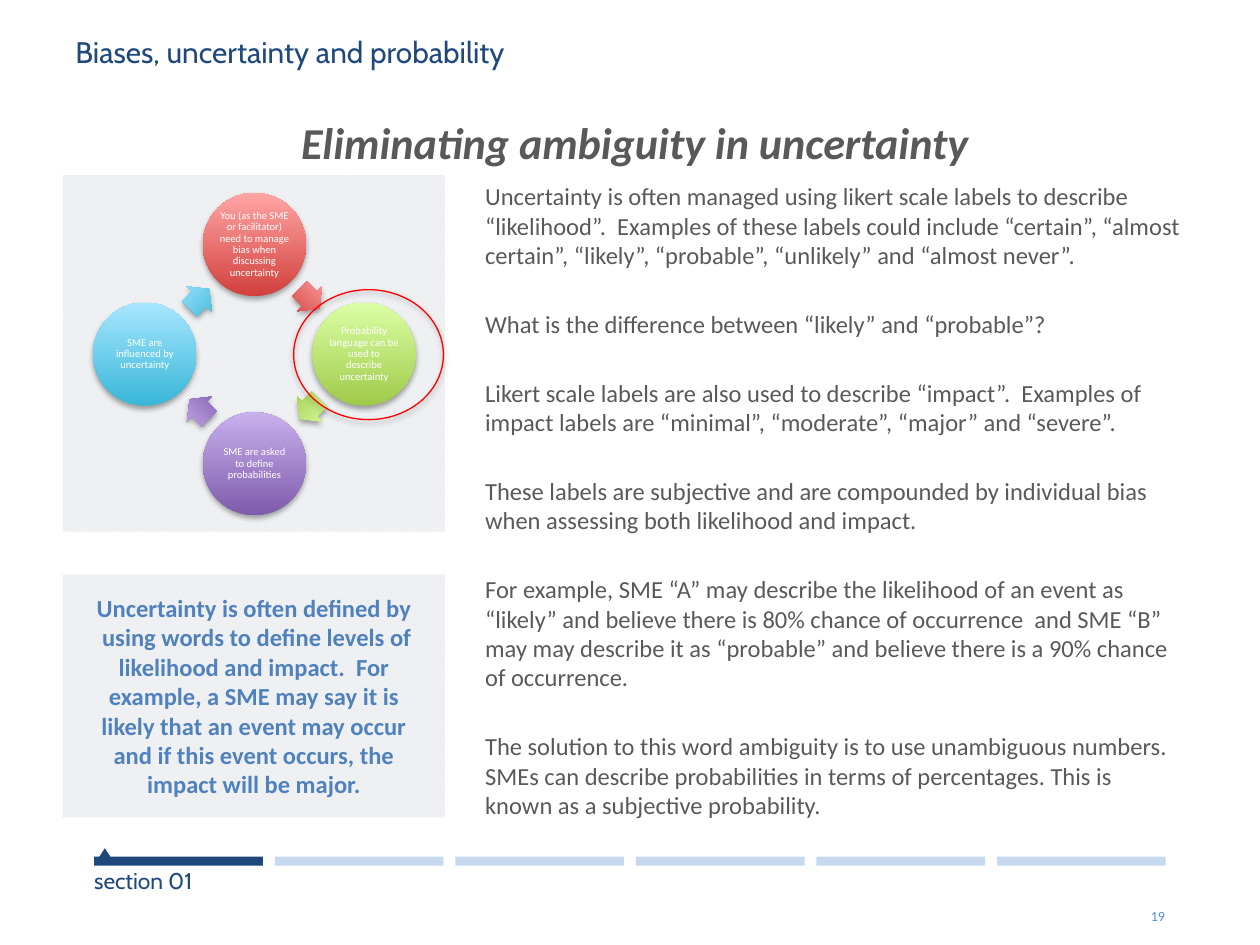
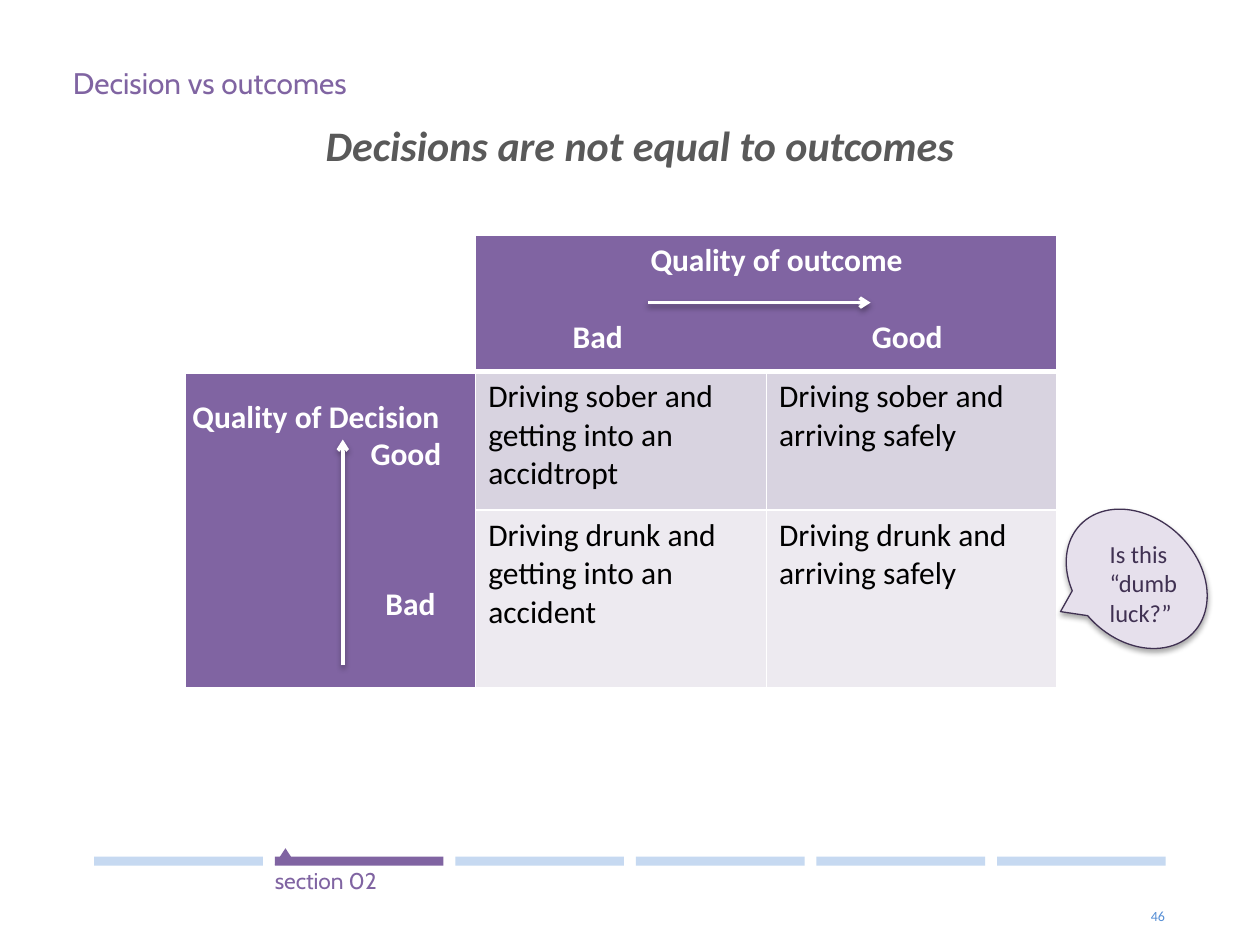
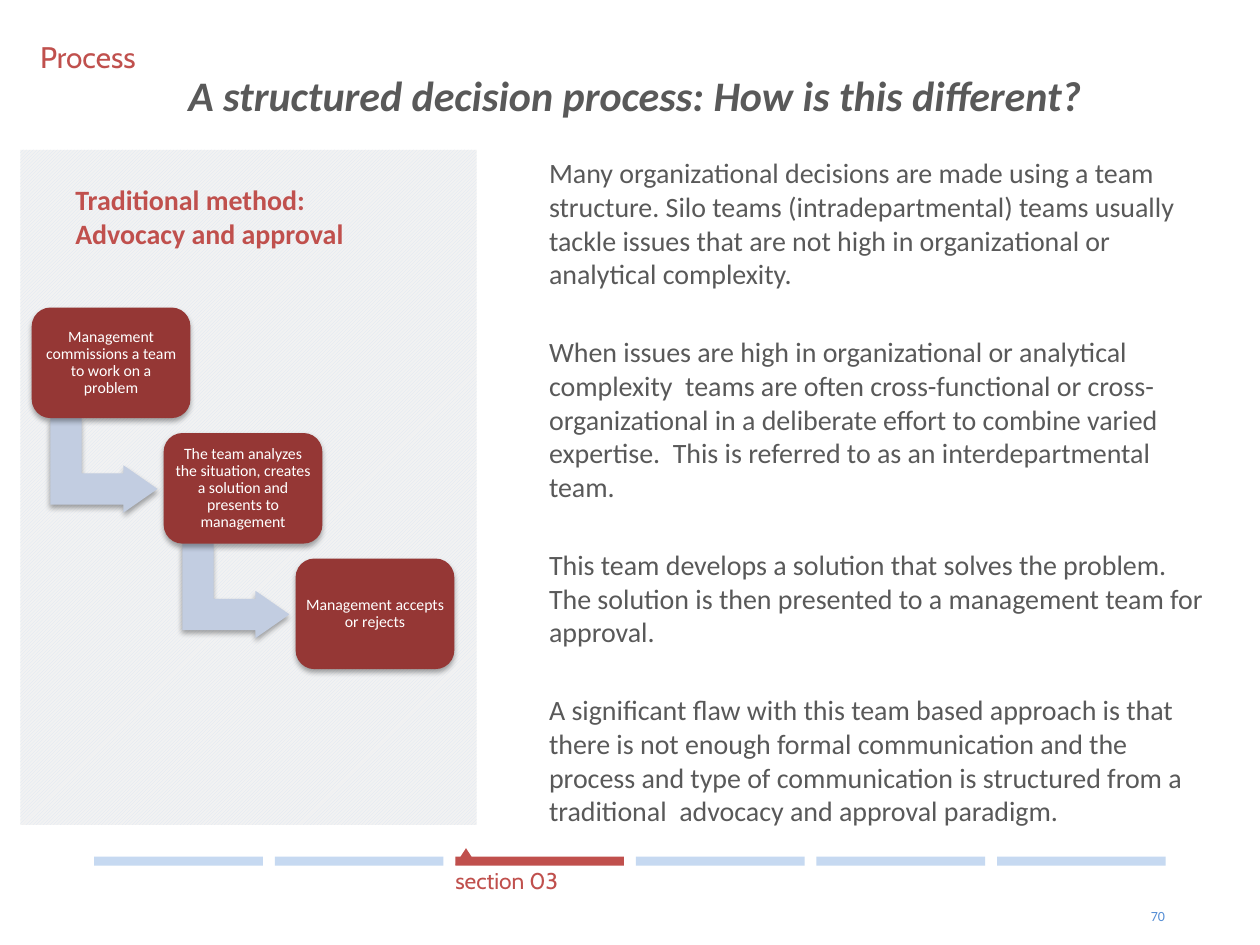
from lxml import etree
from pptx import Presentation
from pptx import util as u
from pptx.dml.color import RGBColor
from pptx.enum import dml, shapes, text
from pptx.oxml import parse_xml
from pptx.oxml.ns import nsdecls, qn

COLORS = {
    "navy": "1F497D", "purple": "8064A2", "red": "C0504D", "bar": "C6D9F1",
    "number": "558ED5", "gray": "595959", "blue": "4F81BD", "white": "FFFFFF",
    "black": "000000", "stripe": "DCE6F2", "panel": "F2F2F2", "ring": "FF0000",
    "brick": "953735", "bend": "C2CDE1", "bubble": "E6E0EC", "plum": "403152",
    "lilac": "D8D3E0", "mist": "EDEAF0",
}
RGB = {name: RGBColor.from_string(value) for name, value in COLORS.items()}
KIND = shapes.MSO_SHAPE
LEFT, CENTER, RIGHT = text.PP_ALIGN.LEFT, text.PP_ALIGN.CENTER, text.PP_ALIGN.RIGHT
TOP, MIDDLE, BOTTOM = text.MSO_ANCHOR.TOP, text.MSO_ANCHOR.MIDDLE, text.MSO_ANCHOR.BOTTOM
SHADOW = (
    f'<a:effectLst {nsdecls("a")}><a:outerShdw blurRad="40000" dist="23000" dir="5400000" '
    'rotWithShape="0"><a:srgbClr val="000000"><a:alpha val="35000"/></a:srgbClr>'
    "</a:outerShdw></a:effectLst>"
)


def write(frame, lines, size, color, font="Calibri", bold=False, italic=False, align=LEFT,
          anchor=TOP, inset=None, gap=0, spacing=None):
    frame.word_wrap = True
    frame.auto_size = text.MSO_AUTO_SIZE.NONE
    frame.vertical_anchor = anchor
    if inset is not None:
        for side in ("left", "top", "right", "bottom"):
            setattr(frame, f"margin_{side}", u.Cm(inset))
    for index, line in enumerate(lines):
        words, before, stops = line if isinstance(line, tuple) else (line, gap, ())
        para = frame.add_paragraph() if index else frame.paragraphs[0]
        formats = {"alignment": align, "line_spacing": spacing,
                   "space_before": u.Pt(before if index else 0)}
        for name, value in formats.items():
            setattr(para, name, value)
        if stops:
            tabs = etree.SubElement(para._p.get_or_add_pPr(), qn("a:tabLst"))
            for stop in stops:
                etree.SubElement(tabs, qn("a:tab"), pos=str(u.Cm(stop)), algn="l")
        span = para.add_run()
        span.text = words
        for name, value in {"name": font, "size": u.Pt(size), "bold": bold, "italic": italic}.items():
            setattr(span.font, name, value)
        span.font.color.rgb = RGB[color]


def draw(page, kind, area, fill=None, line=None, shadow=False, turn=0, adjust=()):
    shape = page.shapes.add_shape(kind, *map(u.Cm, area))
    shape.shadow.inherit = False
    shape.rotation = turn
    for index, value in enumerate(adjust):
        shape.adjustments[index] = value
    if fill is None:
        shape.fill.background()
    elif fill == "panel":
        shape.fill.patterned()
        shape.fill.pattern = dml.MSO_PATTERN.DARK_UPWARD_DIAGONAL
        shape.fill.fore_color.rgb = RGB["stripe"]
        shape.fill.back_color.rgb = RGB["panel"]
    elif isinstance(fill, tuple):
        shape.fill.gradient()
        shape.fill.gradient_angle = 90
        for stop, value in zip(shape.fill.gradient_stops, fill):
            stop.color.rgb = RGBColor.from_string(value)
    else:
        shape.fill.solid()
        shape.fill.fore_color.rgb = RGB[fill]
    if line:
        shape.line.color.rgb = RGB[line]
        shape.line.width = u.Pt(0.75)
    else:
        shape.line.fill.background()
    if shadow:
        properties = shape._element.spPr
        properties.replace(properties.find(qn("a:effectLst")), parse_xml(SHADOW))
    return shape


deck = Presentation()
deck.slide_width, deck.slide_height = u.Cm(25.4), u.Cm(19.05)

sections = [
    {"color": "navy", "number": "19", "topic": "Biases, uncertainty and probability",
     "topic_area": (1.27, 0.66, 21.59, 1.24), "title": "Eliminating ambiguity in uncertainty",
     "title_area": (1.37, 1.6, 22.86, 2.54), "title_size": 25.2},
    {"color": "purple", "number": "46", "topic": "Decision vs outcomes",
     "topic_area": (1.22, 1.3, 22.2, 1.24), "title": "Decisions are not equal to outcomes",
     "title_area": (1.47, 1.65, 22.86, 2.54), "title_size": 24},
    {"color": "red", "number": "70", "topic": "Process",
     "topic_area": (0.56, 0.76, 20, 1.24),
     "title": "A structured decision process: How is this different?",
     "title_area": (1.37, 0.64, 22.86, 2.54), "title_size": 24},
]
pages = []
for current, section in enumerate(sections):
    page = deck.slides.add_slide(deck.slide_layouts[5])
    pages.append(page)
    color = section["color"]
    title = page.shapes.title
    for name, value in zip(("left", "top", "width", "height"), section["title_area"]):
        setattr(title, name, u.Cm(value))
    write(title.text_frame, [section["title"]], section["title_size"], "gray", bold=True,
          italic=True, align=CENTER, anchor=MIDDLE)
    topic = page.shapes.add_textbox(*map(u.Cm, section["topic_area"]))
    write(topic.text_frame, [section["topic"]], 17, color, font="Cabin", spacing=0.85)
    for index in range(6):
        draw(page, KIND.RECTANGLE, (1.9 + 3.64 * index, 17.27, 3.4, 0.18),
             color if index == current else "bar")
    left = 1.9 + 3.64 * current
    draw(page, KIND.ISOSCELES_TRIANGLE, (left, 17.1, 0.43, 0.33), color)
    label = page.shapes.add_textbox(*map(u.Cm, (left, 17.48, 3.4, 0.56)))
    write(label.text_frame, [f"section 0{current + 1}"], 13, color, font="Cabin", inset=0)
    number = page.shapes.add_textbox(*map(u.Cm, (22.68, 18.31, 0.81, 0.33)))
    write(number.text_frame, [section["number"]], 8, "number", align=RIGHT, anchor=BOTTOM, inset=0)

ambiguity, outcomes, process = pages

summary = draw(ambiguity, KIND.RECTANGLE, (1.27, 11.58, 7.7, 4.9), "panel")
write(summary.text_frame, [
    "Uncertainty is often defined by  using words to define levels of likelihood and impact.  "
    "For example, a SME may say it is likely that an event may occur and if this event occurs, "
    "the impact will be major."], 14, "blue", bold=True, align=CENTER, anchor=MIDDLE, inset=0.64)
body = ambiguity.shapes.add_textbox(*map(u.Cm, (9.53, 3.53, 14.6, 12.34)))
write(body.text_frame, [
    "Uncertainty is often managed using likert scale labels to describe “likelihood”.  Examples of "
    "these labels could include “certain”, “almost certain”, “likely”, “probable”, “unlikely” and "
    "“almost never”.",
    "What is the difference between “likely” and “probable”?",
    "Likert scale labels are also used to describe “impact”.  Examples of impact labels are "
    "“minimal”, “moderate”, “major” and “severe”.",
    "These labels are subjective and are compounded by individual bias when assessing both "
    "likelihood and impact.",
    "For example, SME “A” may describe the likelihood of an event as “likely” and believe there is "
    "80% chance of occurrence  and SME “B” may may describe it as “probable” and believe there is "
    "a 90% chance of occurrence.",
    "The solution to this word ambiguity is to use unambiguous numbers. SMEs can describe "
    "probabilities in terms of percentages. This is known as a subjective probability.",
], 14, "gray", gap=22.5)

draw(ambiguity, KIND.RECTANGLE, (1.27, 3.53, 7.7, 7.19), "panel")
cycle = [
    ("You (as the SME or facilitator) need to manage bias when discussing uncertainty",
     ("D1403C", "FFA6A5"), (0, -1), (1, -1)),
    ("Probability language can be used to describe uncertainty",
     ("A0CA4A", "DAFFA5"), (1, 0), (1, 1)),
    ("SME are asked to define probabilities", ("7F5BAB", "C8B0ED"), (0, 1), (-1, 1)),
    ("SME are influenced by uncertainty", ("39B7D8", "A7E6FF"), (-1, 0), (-1, -1)),
]
for index, (words, fade, place, corner) in enumerate(cycle):
    circle = draw(ambiguity, KIND.OVAL,
                  (4.09 + 2.21 * place[0], 6.1 + 2.21 * place[1], 2.08, 2.08), fade, shadow=True)
    write(circle.text_frame, [words], 6, "white", align=CENTER, anchor=MIDDLE, inset=0.03,
          spacing=0.9)
    draw(ambiguity, KIND.RIGHT_ARROW,
         (4.85 + 1.11 * corner[0], 6.78 + 1.11 * corner[1], 0.56, 0.71), fade, shadow=True,
         turn=45 + 90 * index, adjust=(0.6, 0.5))
draw(ambiguity, KIND.OVAL, (5.92, 5.84, 3.02, 2.62), line="ring", shadow=True)

table = outcomes.shapes.add_table(3, 3, *map(u.Cm, (3.73, 4.75, 17.58, 9.11))).table
for column in table.columns:
    column.width = u.Cm(5.86)
for row, height in zip(table.rows, (2.74, 2.79, 3.58)):
    row.height = u.Cm(height)
table.cell(0, 1).merge(table.cell(0, 2))
table.cell(1, 0).merge(table.cell(2, 0))
fills = [(None, "purple", "purple"), ("purple", "lilac", "lilac"), ("purple", "mist", "mist")]
for row, names in enumerate(fills):
    for column, name in enumerate(names):
        cell = table.cell(row, column)
        if name:
            cell.fill.solid()
            cell.fill.fore_color.rgb = RGB[name]
        else:
            cell.fill.background()
        widths = {"L": 1, "R": 1, "T": 3 if row == 1 else 1, "B": 3 if row == 0 else 1}
        for index, (side, width) in enumerate(widths.items()):
            cell._tc.get_or_add_tcPr().insert(index, parse_xml(
                f'<a:ln{side} {nsdecls("a")} w="{u.Pt(width)}"><a:solidFill>'
                f'<a:srgbClr val="{COLORS["white"]}"/></a:solidFill></a:ln{side}>'))
write(table.cell(0, 1).text_frame,
      [("\tQuality of outcome", 0, (3.27,)), ("\tBad\tGood", 22, (1.7, 7.73))],
      18, "white", bold=True)
answers = [("Driving sober and getting into an accidtropt", "Driving sober and arriving safely"),
           ("Driving drunk and getting into an accident", "Driving drunk and arriving safely")]
for row, pair in enumerate(answers, 1):
    for column, words in enumerate(pair, 1):
        write(table.cell(row, column).text_frame, [words], 18, "black")

decision = outcomes.shapes.add_textbox(*map(u.Cm, (3.63, 7.87, 5.6, 5.64)))
write(decision.text_frame,
      ["Quality of Decision", ("\tGood", 0, (3.59,)), ("\tBad", 64, (3.89,))],
      18, "white", bold=True)
for ends in ((13.06, 6.1, 17.55, 6.1), (6.91, 13.41, 6.91, 8.86)):
    arrow = outcomes.shapes.add_connector(shapes.MSO_CONNECTOR.STRAIGHT, *map(u.Cm, ends))
    arrow.line.color.rgb = RGB["white"]
    arrow.line.width = u.Pt(2)
    etree.SubElement(arrow.line._get_or_add_ln(), qn("a:tailEnd"), type="arrow")
    arrow._element.spPr.append(parse_xml(SHADOW))
draw(outcomes, KIND.OVAL_CALLOUT, (21.34, 10.44, 3.15, 2.46), "bubble", "plum", True, 43.6)
remark = outcomes.shapes.add_textbox(*map(u.Cm, (22.12, 10.74, 1.98, 2.06)))
write(remark.text_frame, ["Is this “dumb luck?”"], 14, "plum")

draw(process, KIND.RECTANGLE, (0.41, 3.02, 9.2, 13.61), "panel")
body = process.shapes.add_textbox(*map(u.Cm, (10.82, 3.02, 13.84, 13.26)))
write(body.text_frame, [
    "Many organizational decisions are made using a team structure. Silo teams "
    "(intradepartmental) teams usually tackle issues that are not high in organizational or "
    "analytical complexity.",
    "When issues are high in organizational or analytical complexity  teams are often "
    "cross-functional or cross-organizational in a deliberate effort to combine varied "
    "expertise.  This is referred to as an interdepartmental team.",
    "This team develops a solution that solves the problem. The solution is then presented to a "
    "management team for approval.",
    "A significant flaw with this team based approach is that there is not enough formal "
    "communication and the process and type of communication is structured from a traditional  "
    "advocacy and approval paradigm.",
], 16, "gray", gap=25.5)
method = process.shapes.add_textbox(*map(u.Cm, (1.27, 3.56, 6.63, 1.63)))
write(method.text_frame, ["Traditional method: Advocacy and approval"], 16, "red", bold=True)
steps = ["Management commissions a team to work on a problem",
         "The team analyzes the situation, creates a solution and presents to management",
         "Management accepts or rejects"]
for index, words in enumerate(steps):
    across, down = 2.66 * index, 2.53 * index
    if index < len(steps) - 1:
        draw(process, KIND.BENT_UP_ARROW, (1.14 + across, 8.3 + down, 1.91, 2.16), "bend",
             shadow=True, turn=90, adjust=(0.33, 0.25, 0.36))
    step = draw(process, KIND.ROUNDED_RECTANGLE, (0.64 + across, 6.2 + down, 3.2, 2.23), "brick",
                shadow=True, adjust=(0.17,))
    write(step.text_frame, [words], 9, "white", align=CENTER, anchor=MIDDLE, inset=0.1,
          spacing=0.9)

deck.save("out.pptx")
